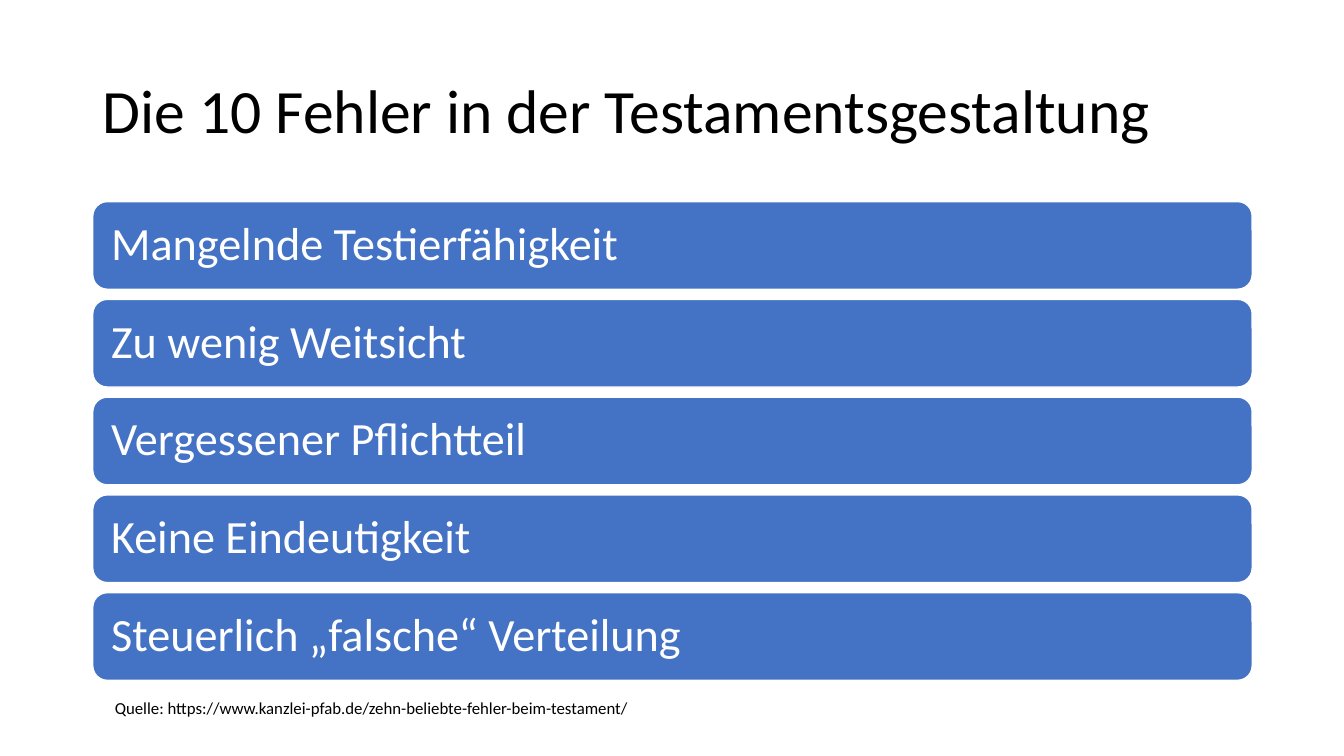
"""Build the slide on the common mistakes in drafting a will."""
from dataclasses import dataclass
from pptx import Presentation
from pptx.dml.color import RGBColor as Rgb
from pptx.enum.shapes import MSO_SHAPE as Shape
from pptx.enum.text import MSO_ANCHOR as Anchor, MSO_AUTO_SIZE as Fit, PP_ALIGN as Align
from pptx.util import Pt


@dataclass(frozen=True)
class Theme:
    face: str = "Calibri"
    ink: Rgb = Rgb(0, 0, 0)
    paper: Rgb = Rgb(255, 255, 255)
    bar: Rgb = Rgb(0x44, 0x72, 0xC4)
    title: int = 44
    item: int = 33
    note: int = 12


PX = 9144
theme = Theme()


def box(*sides):
    return [side * PX for side in sides]


def write(frame, text, size, color, lead=1.0):
    frame.word_wrap = True
    par = frame.paragraphs[0]
    par.alignment = Align.LEFT
    par.line_spacing = lead
    run = par.add_run()
    run.text = text
    run.font.name = theme.face
    run.font.size = Pt(size)
    run.font.color.rgb = color


deck = Presentation()
deck.slide_width, deck.slide_height = box(1333, 750)
slide = deck.slides.add_slide(deck.slide_layouts[5])
shapes = slide.shapes

title = shapes.title
title.left, title.top, title.width, title.height = box(92, 40, 1150, 145)
title.text_frame.auto_size = Fit.NONE
title.text_frame.vertical_anchor = Anchor.MIDDLE
write(title.text_frame, "Die 10 Fehler in der Testamentsgestaltung",
      theme.title, theme.ink, 0.9)

items = [
    "Mangelnde Testierfähigkeit",
    "Zu wenig Weitsicht",
    "Vergessener Pflichtteil",
    "Keine Eindeutigkeit",
    "Steuerlich „falsche“ Verteilung",
]
top, step, inset = 200, 97, 14 * PX
for row, item in enumerate(items):
    bar = shapes.add_shape(Shape.ROUNDED_RECTANGLE,
                           *box(92, top + row * step, 1150, 87))
    bar.shadow.inherit = False
    bar.fill.solid()
    bar.fill.fore_color.rgb = theme.bar
    bar.line.color.rgb = theme.paper
    bar.line.width = Pt(1)
    frame = bar.text_frame
    frame.vertical_anchor = Anchor.MIDDLE
    frame.margin_left = frame.margin_right = inset
    frame.margin_top = frame.margin_bottom = inset
    write(frame, item, theme.item, theme.paper, 0.9)

note = shapes.add_textbox(*box(104, 687, 952, 30))
write(note.text_frame,
      "Quelle: https://www.kanzlei-pfab.de/zehn-beliebte-fehler-beim-testament/",
      theme.note, theme.ink)
note.text_frame.auto_size = Fit.SHAPE_TO_FIT_TEXT

deck.save("out.pptx")
